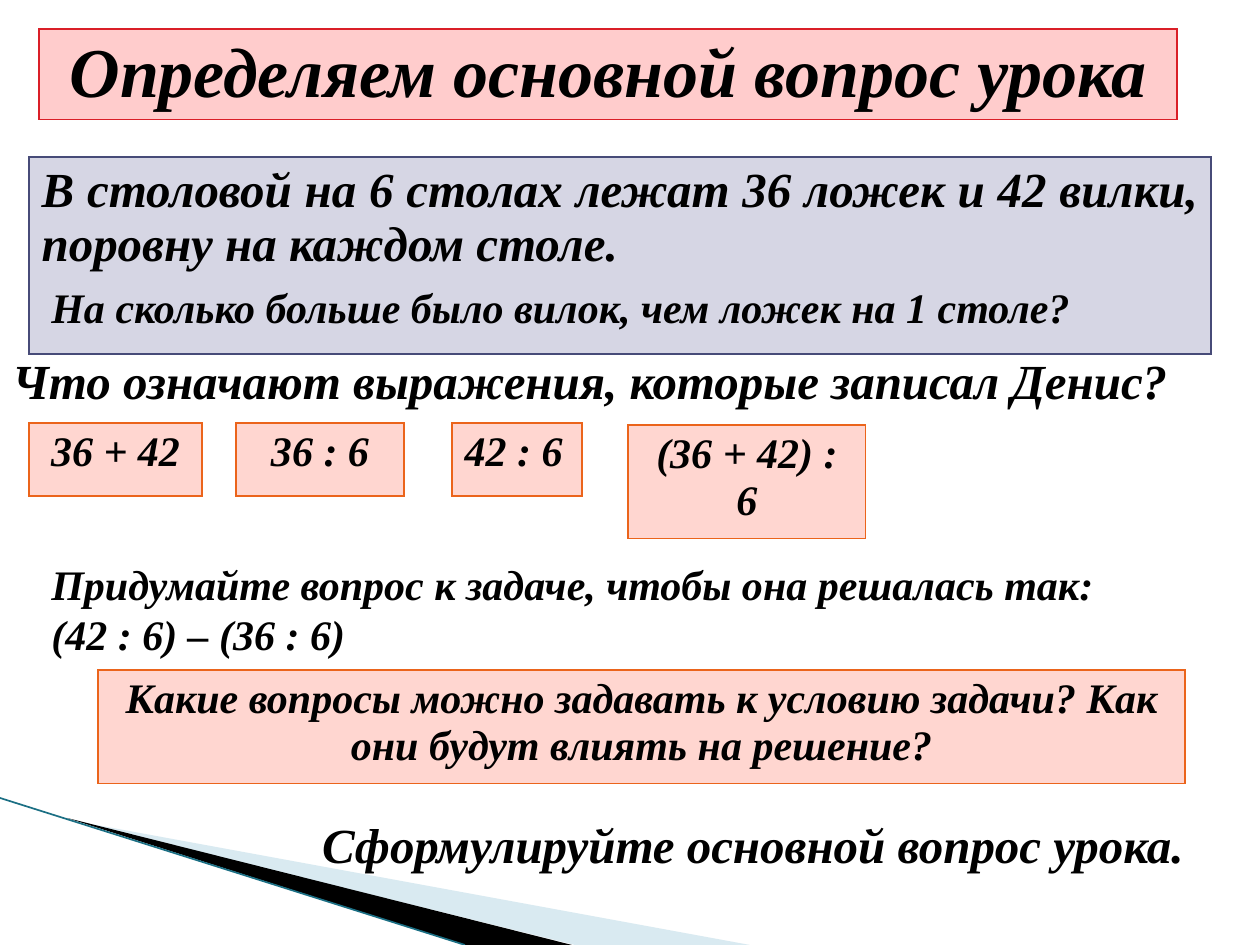
from lxml.etree import SubElement
from pptx import Presentation
from pptx.dml.color import RGBColor
from pptx.enum.shapes import MSO_CONNECTOR
from pptx.enum.text import MSO_AUTO_SIZE, PP_ALIGN
from pptx.oxml import parse_xml
from pptx.oxml.ns import nsdecls, qn
from pptx.util import Pt

PX = 9144000 // 1260
FONT = "Times New Roman"
PINK, PEACH, LILAC = "FFCCCC", "FFD6D0", "D6D6E4"
RED, ORANGE, NAVY = "DA1F28", "EB641B", "474B78"
LEFT, MID, JUST = PP_ALIGN.LEFT, PP_ALIGN.CENTER, PP_ALIGN.JUSTIFY


def color(code):
    return RGBColor.from_string(code)


def scale(box):
    return [n * PX for n in box]


def write(frame, text, size, align):
    frame.text = text
    for para in frame.paragraphs:
        para.alignment = align
        for run in para.runs:
            font = run.font
            font.name, font.size = FONT, Pt(size)
            font.bold = font.italic = True
            font.color.rgb = color("000000")


def border(cell, code):
    props = cell._tc.get_or_add_tcPr()
    for i, side in enumerate("LRTB"):
        props.insert(i, parse_xml(
            f'<a:ln{side} {nsdecls("a")} w="9525"><a:solidFill>'
            f'<a:srgbClr val="{code}"/></a:solidFill></a:ln{side}>'))


def panel(slide, box, text, size, fill, edge, align=MID):
    table = slide.shapes.add_table(1, 1, *scale(box)).table
    cell = table.cell(0, 0)
    cell.fill.solid()
    cell.fill.fore_color.rgb = color(fill)
    border(cell, edge)
    write(cell.text_frame, text, size, align)


def label(slide, box, text, size, align=LEFT, wrap=False):
    frame = slide.shapes.add_textbox(*scale(box)).text_frame
    frame.word_wrap = wrap
    frame.auto_size = MSO_AUTO_SIZE.SHAPE_TO_FIT_TEXT
    write(frame, text, size, align)


def wedge(slide, box, points, code, alpha=100):
    left, top = box[:2]
    spots = [(left + x, top + y) for x, y in points]
    build = slide.shapes.build_freeform(*spots[0], scale=PX)
    build.add_line_segments(spots[1:])
    shape = build.convert_to_shape()
    shape.shadow.inherit = False
    shape.fill.solid()
    shape.fill.fore_color.rgb = color(code)
    shape.line.fill.background()
    if alpha < 100:
        tint = shape._element.spPr.find(".//" + qn("a:srgbClr"))
        SubElement(tint, qn("a:alpha"), val=str(alpha * 1000))


def corner(slide, box):
    left, top, width, height = box
    wedge(slide, box, [(69, 22), (width, height), (575, height)], "A0CBDC", 40)
    wedge(slide, box, [(67, 20), (572, height), (465, height)], "000000")
    ends = scale([left, top, left + 465, top + height])
    line = slide.shapes.add_connector(MSO_CONNECTOR.STRAIGHT, *ends)
    line.line.color.rgb = color("1B6F84")
    line.line.width = Pt(0.95)
    SubElement(line._element.spPr, qn("a:effectLst"))


def task(slide, box):
    left, top, width, height = box
    panel(slide, box,
          "В столовой на 6 столах лежат 36 ложек и 42 вилки, "
          "поровну на каждом столе. ", 28, LILAC, NAVY, JUST)
    label(slide, (left + 10, top + 118, width - 20, 63),
          "На сколько больше было вилок, чем ложек на 1 столе?", 24, wrap=True)


def sums(slide, box):
    left, top, width, height = box
    label(slide, (left, top, width, 72),
          "Что означают выражения, которые записал Денис?", 28)
    cards = [
        (29, 79, 173, 73, "36 + 42", MID),
        (236, 79, 168, 73, "36 : 6", MID),
        (452, 79, 130, 73, "42 : 6", LEFT),
        (628, 81, 238, 71, "(36 + 42) : 6", MID),
    ]
    for x, y, wide, high, text, align in cards:
        panel(slide, (left + x, top + y, wide, high), text, 24,
              PEACH, ORANGE, align)


def final(slide, box):
    left, top, width, height = box
    label(slide, (left, top, 1089, 115),
          "Придумайте вопрос к задаче, чтобы она решалась так:\n"
          "(42 : 6) – (36 : 6)", 24)
    panel(slide, (left + 59, top + 118, 1087, 113),
          "Какие вопросы можно задавать к условию задачи? "
          "Как они будут влиять на решение?", 24, PEACH, ORANGE)
    label(slide, (left + 266, top + 256, 896, 72),
          "Сформулируйте основной вопрос урока.", 28, MID)


def main():
    deck = Presentation()
    deck.slide_width, deck.slide_height = scale((1260, 945))
    slide = deck.slides.add_slide(deck.slide_layouts[6])
    corner(slide, (0, 798, 750, 147))
    panel(slide, (39, 29, 1138, 90), "Определяем основной вопрос урока",
          40, PINK, RED)
    task(slide, (29, 157, 1182, 197))
    sums(slide, (0, 344, 1192, 152))
    final(slide, (39, 552, 1162, 328))
    deck.save("out.pptx")


if __name__ == "__main__":
    main()
